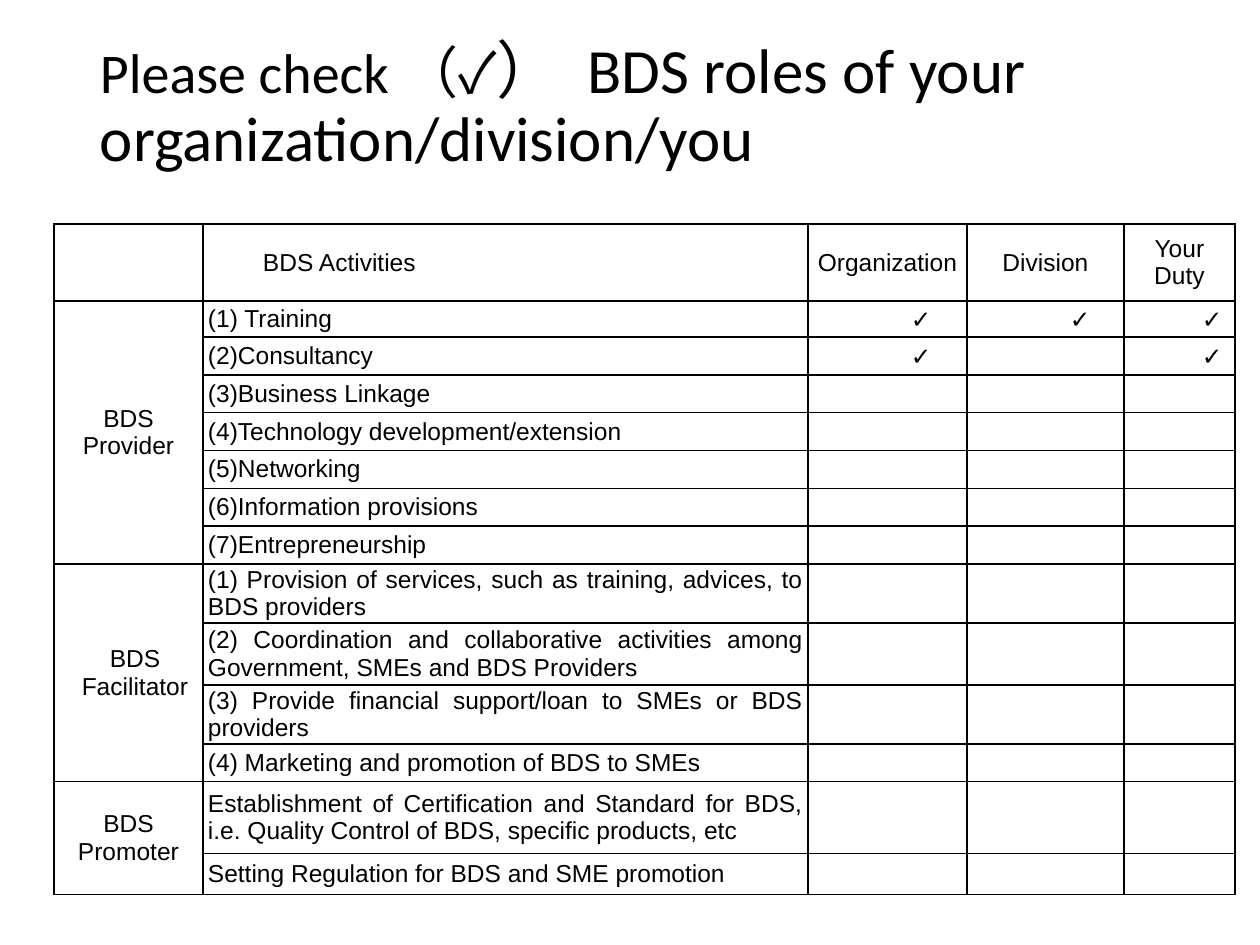
from dataclasses import dataclass
from lxml.etree import SubElement as Sub
from pptx import Presentation
from pptx.dml.color import RGBColor as Rgb
from pptx.enum.text import MSO_ANCHOR as Anchor, PP_ALIGN as Align
from pptx.oxml.ns import qn
from pptx.util import Emu, Pt


@dataclass
class Theme:
    ink: str = "000000"
    head: str = "Calibri"
    body: str = "Arial"
    mark: str = "TeX Gyre Schola"
    lead: int = 32
    large: int = 36
    small: int = 14
    rule: int = 1


def px(num):
    return Emu(round(num * 914400 / 126))


class Deck:
    def __init__(self, theme):
        self.theme = theme
        self.prs = Presentation()
        self.prs.slide_width, self.prs.slide_height = px(1260), px(945)
        self.slide = self.prs.slides.add_slide(self.prs.slide_layouts[6])

    def run(self, para, text, size, face):
        run = para.add_run()
        run.text = text
        run.font.size = Pt(size)
        run.font.name = face
        run.font.color.rgb = Rgb.from_string(self.theme.ink)

    def title(self, box, parts):
        frame = self.slide.shapes.add_textbox(*map(px, box)).text_frame
        frame.word_wrap = True
        frame.vertical_anchor = Anchor.MIDDLE
        frame.margin_left = frame.margin_right = px(13)
        frame.margin_top, frame.margin_bottom = px(6), px(75)
        para = frame.paragraphs[0]
        para.line_spacing = 0.9
        for text, size in parts:
            self.run(para, text, size, self.theme.head)

    def table(self, left, top, cols, rows):
        frame = self.slide.shapes.add_table(
            len(rows), len(cols), px(left), px(top), px(sum(cols)), px(sum(rows)))
        table = frame.table
        table.first_row = table.horz_banding = False
        for col, wide in zip(table.columns, cols):
            col.width = px(wide)
        for row, high in zip(table.rows, rows):
            row.height = px(high)
        for cell in table.iter_cells():
            self.frame(cell)
        return table

    def frame(self, cell):
        cell.margin_left = cell.margin_right = px(5)
        cell.margin_top = cell.margin_bottom = 0
        cell.vertical_anchor = Anchor.MIDDLE
        props = cell._tc.get_or_add_tcPr()
        for side in ("lnL", "lnR", "lnT", "lnB"):
            line = Sub(props, qn(f"a:{side}"), w=str(Pt(self.theme.rule)))
            fill = Sub(line, qn("a:solidFill"))
            Sub(fill, qn("a:srgbClr"), val=self.theme.ink)
        cell.fill.background()

    def label(self, cell, text, align, dent=0, face=None):
        para = cell.text_frame.paragraphs[0]
        para.alignment = align
        if dent:
            props = para._p.get_or_add_pPr()
            props.set("marL", str(px(dent)))
            props.set("indent", "0")
        self.run(para, text, self.theme.small, face or self.theme.body)

    def save(self):
        self.prs.save("out.pptx")


HEADS = ["Organization", "Division", "Your Duty"]
GROUPS = [
    ("BDS Provider", 0, [
        ("(1) Training", 36),
        ("(2)Consultancy", 36),
        ("(3)Business Linkage", 36),
        ("(4)Technology development/extension", 37),
        ("(5)Networking", 36),
        ("(6)Information provisions", 36),
        ("(7)Entrepreneurship", 36),
    ]),
    ("BDS Facilitator", 13, [
        ("(1) Provision of services, such as training, advices, to BDS providers", 58),
        ("(2) Coordination and collaborative activities among Government, "
         "SMEs and BDS Providers", 62),
        ("(3) Provide financial support/loan to SMEs or BDS providers", 55),
        ("(4) Marketing and promotion of BDS to SMEs", 36),
    ]),
    ("BDS Promoter", 0, [
        ("Establishment of Certification and Standard for BDS, "
         "i.e. Quality Control of BDS, specific products, etc", 72),
        ("Setting Regulation for BDS and SME promotion", 41),
    ]),
]
CHECKS = [(1, 2), (1, 3), (1, 4), (2, 2), (2, 4)]
DENTS = {2: 98, 3: 98, 4: 73}


def main():
    theme = Theme()
    deck = Deck(theme)
    deck.title((87, 50, 1086, 183), [
        ("Please check （✓", theme.lead),
        ("）  BDS roles of your organization/division/you", theme.large),
    ])
    rows = [77] + [high for _, _, acts in GROUPS for _, high in acts]
    table = deck.table(54, 224, [149, 605, 159, 157, 111], rows)
    deck.label(table.cell(0, 1), "BDS Activities", Align.JUSTIFY, 55)
    for col, text in enumerate(HEADS, 2):
        deck.label(table.cell(0, col), text, Align.CENTER)
    row = 1
    for name, dent, acts in GROUPS:
        first = table.cell(row, 0)
        first.merge(table.cell(row + len(acts) - 1, 0))
        deck.label(first, name, Align.CENTER, dent)
        for text, _ in acts:
            deck.label(table.cell(row, 1), text, Align.JUSTIFY)
            row += 1
    for row, col in CHECKS:
        deck.label(table.cell(row, col), "✓", Align.LEFT, DENTS[col], theme.mark)
    deck.save()


if __name__ == "__main__":
    main()
